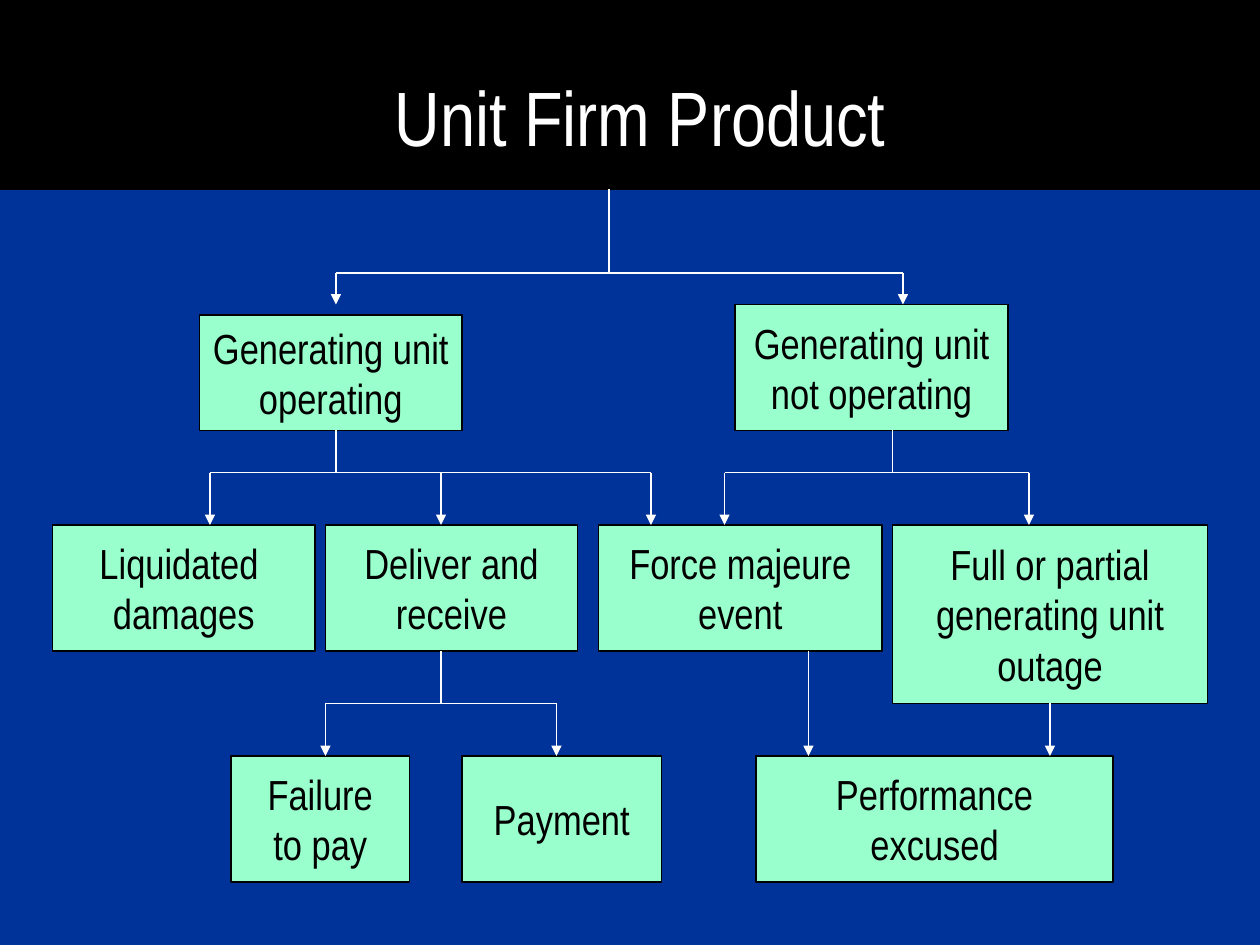
from lxml.etree import SubElement
from pptx import Presentation
from pptx.dml.color import RGBColor
from pptx.enum.shapes import MSO_CONNECTOR, MSO_SHAPE
from pptx.enum.text import MSO_ANCHOR, MSO_AUTO_SIZE, PP_ALIGN
from pptx.oxml.ns import qn
from pptx.util import Pt

PX = 9525  # EMU per px, 96 px to the inch
BLACK = RGBColor(0x00, 0x00, 0x00)
WHITE = RGBColor(0xFF, 0xFF, 0xFF)
BLUE = RGBColor(0x00, 0x33, 0x99)
MINT = RGBColor(0x99, 0xFF, 0xCC)
FONT = "Arial Narrow"

TITLE = "Unit Firm Product"

# Boxes: text, left, top, width, height
BOXES = [
    ("Generating unit\noperating", 152, 240, 200, 88),
    ("Generating unit\vnot operating", 560, 232, 208, 96),
    ("Liquidated \ndamages", 40, 400, 200, 96),
    ("Deliver and\nreceive", 248, 400, 192, 96),
    ("Force majeure\nevent", 456, 400, 216, 96),
    ("Full or partial\ngenerating unit\noutage", 680, 400, 240, 136),
    ("Failure\nto pay", 176, 576, 136, 96),
    ("Payment", 352, 576, 152, 96),
    ("Performance\nexcused", 576, 576, 272, 96),
]

# Branches: stem x, stem top, bar y, arrow tip y, arrow x positions
BRANCHES = [
    (464, 144, 208, 232, [256, 688]),
    (256, 328, 360, 400, [160, 336, 496]),
    (680, 328, 360, 400, [552, 784]),
    (336, 496, 536, 576, [248, 424]),
]


def format_text(shape, text, size, color):
    tf = shape.text_frame
    tf.text = text
    tf.word_wrap = False
    tf.auto_size = MSO_AUTO_SIZE.NONE
    tf.vertical_anchor = MSO_ANCHOR.MIDDLE
    for p in tf.paragraphs:
        p.alignment = PP_ALIGN.CENTER
        for r in p.runs:
            r.font.size = Pt(size)
            r.font.name = FONT
            r.font.color.rgb = color


def add_rect(s, left, top, width, height, fill):
    sp = s.shapes.add_shape(MSO_SHAPE.RECTANGLE, left * PX, top * PX, width * PX, height * PX)
    sp.shadow.inherit = False
    sp.fill.solid()
    sp.fill.fore_color.rgb = fill
    sp.line.color.rgb = BLACK
    sp.line.width = Pt(0.75)
    return sp


def add_line(s, x1, y1, x2, y2, arrow=False):
    line = s.shapes.add_connector(MSO_CONNECTOR.STRAIGHT, x1 * PX, y1 * PX, x2 * PX, y2 * PX)
    line.line.color.rgb = WHITE
    line.line.width = Pt(0.75)
    spPr = line.element.spPr
    if arrow:
        SubElement(spPr.get_or_add_ln(), qn("a:tailEnd"), type="triangle")
    SubElement(spPr, qn("a:effectLst"))
    return line


def main():
    prs = Presentation()
    prs.slide_width, prs.slide_height = 960 * PX, 720 * PX
    s = prs.slides.add_slide(prs.slide_layouts[5])
    s.background.fill.solid()
    s.background.fill.fore_color.rgb = BLUE

    # Title on its black band, wide enough for one line
    title = s.shapes.title
    title.left, title.top, title.width, title.height = 280 * PX, 40 * PX, 416 * PX, 96 * PX
    format_text(title, TITLE, 44, WHITE)
    band = add_rect(s, 0, 0, 960, 144, BLACK)
    title.element.addprevious(band.element)

    # Boxes
    boxes = {}
    for text, *place in BOXES:
        sp = add_rect(s, *place, MINT)
        format_text(sp, text, 24, BLACK)
        boxes[text] = sp

    # Branches: stem, bar and one arrow per child
    for x, top, bar, tip, xs in BRANCHES:
        add_line(s, x, top, x, bar)
        add_line(s, min(xs), bar, max(xs), bar)
        for child in xs:
            add_line(s, child, bar, child, tip, arrow=True)

    # Arrows to the excused performance
    add_line(s, 616, 496, 616, 576, arrow=True)
    outage = add_line(s, 800, 536, 800, 576, arrow=True)
    outage.begin_connect(boxes["Full or partial\ngenerating unit\noutage"], 2)

    prs.save("out.pptx")


if __name__ == "__main__":
    main()
